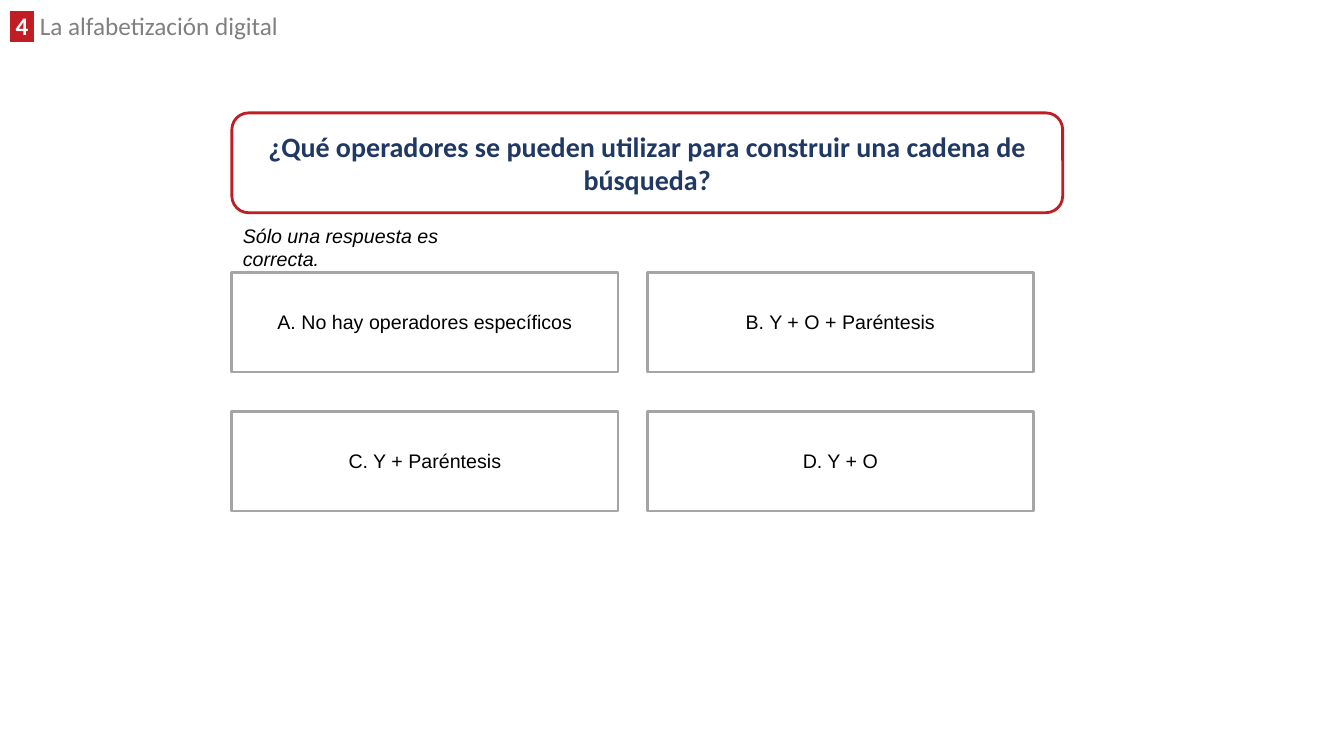
from dataclasses import dataclass

from lxml import etree
from pptx import Presentation
from pptx.dml.color import RGBColor
from pptx.enum import shapes, text
from pptx.oxml import ns
from pptx.util import Inches, Pt


@dataclass(frozen=True)
class Theme:
    red: str = "C01E24"
    navy: str = "203864"
    grey: str = "808080"
    border: str = "A5A5A5"
    white: str = "FFFFFF"
    black: str = "000000"
    heading_font: str = "Calibri"
    body_font: str = "Arial"
    header_size: int = 18
    question_size: int = 20
    body_size: int = 14
    line_width: int = 2


THEME = Theme()


def rgb(value):
    return RGBColor.from_string(value)


def style_font(font, name, size, color, bold=False, italic=False):
    font.name, font.size = name, Pt(size)
    font.bold, font.italic = bold, italic
    font.color.rgb = rgb(color)


def highlight(r, color):
    """Put a coloured background behind a run that already has a font colour."""
    mark = etree.Element(ns.qn("a:highlight"))
    etree.SubElement(mark, ns.qn("a:srgbClr"), val=color)
    r.font._element.find(ns.qn("a:solidFill")).addnext(mark)


def add_text_box(s, left, top, width, height):
    tf = s.shapes.add_textbox(Inches(left), Inches(top), Inches(width), Inches(height)).text_frame
    tf.word_wrap = True
    return tf.paragraphs[0]


def add_header(s, number, title):
    p = add_text_box(s, 0, 0.11, 5.71, 0.34)
    p.line_spacing = 0.8
    p.font.name, p.font.size = THEME.heading_font, Pt(THEME.header_size)
    badge = p.add_run()
    badge.text = f" {number} "
    badge.font.bold = True
    badge.font.color.rgb = rgb(THEME.white)
    highlight(badge, THEME.red)
    r = p.add_run()
    r.text = f" {title}"
    r.font.color.rgb = rgb(THEME.grey)


def add_box(s, kind, left, top, width, content, border, **font):
    """Add a white outlined box with centred text."""
    sp = s.shapes.add_shape(kind, Inches(left), Inches(top), Inches(width), Inches(0.99))
    sp.shadow.inherit = False
    sp.fill.solid()
    sp.fill.fore_color.rgb = rgb(THEME.white)
    sp.line.color.rgb = rgb(border)
    sp.line.width = Pt(THEME.line_width)
    tf = sp.text_frame
    tf.word_wrap = True
    tf.vertical_anchor = text.MSO_ANCHOR.MIDDLE
    p = tf.paragraphs[0]
    p.text = content
    p.alignment = text.PP_ALIGN.CENTER
    style_font(p.font, **font)


def add_question(s, content):
    add_box(s, shapes.MSO_SHAPE.ROUNDED_RECTANGLE, 2.3, 1.12, 8.24, content, THEME.red,
            name=THEME.heading_font, size=THEME.question_size, color=THEME.navy, bold=True)


def add_hint(s, content):
    p = add_text_box(s, 2.31, 2.17, 2.36, 0.34)
    p.text = content
    style_font(p.font, THEME.body_font, THEME.body_size, THEME.black, italic=True)


def add_answers(s, answers):
    """Lay the answers out in two columns, lettered from A."""
    for i, answer in enumerate(answers):
        row, col = divmod(i, 2)
        add_box(s, shapes.MSO_SHAPE.RECTANGLE, 2.3 + col * 4.12, 2.7 + row * 1.38, 3.83,
                f"{'ABCD'[i]}. {answer}", THEME.border,
                name=THEME.body_font, size=THEME.body_size, color=THEME.black)


def main():
    prs = Presentation()
    prs.slide_width, prs.slide_height = Inches(13.33), Inches(7.5)
    s = prs.slides.add_slide(prs.slide_layouts[6])
    add_header(s, 4, "La alfabetización digital")
    add_question(s, "¿Qué operadores se pueden utilizar para construir una cadena de búsqueda?")
    add_answers(s, ["No hay operadores específicos", "Y + O + Paréntesis",
                    "Y + Paréntesis", "Y + O"])
    add_hint(s, "Sólo una respuesta es correcta.")
    prs.save("out.pptx")


if __name__ == "__main__":
    main()
